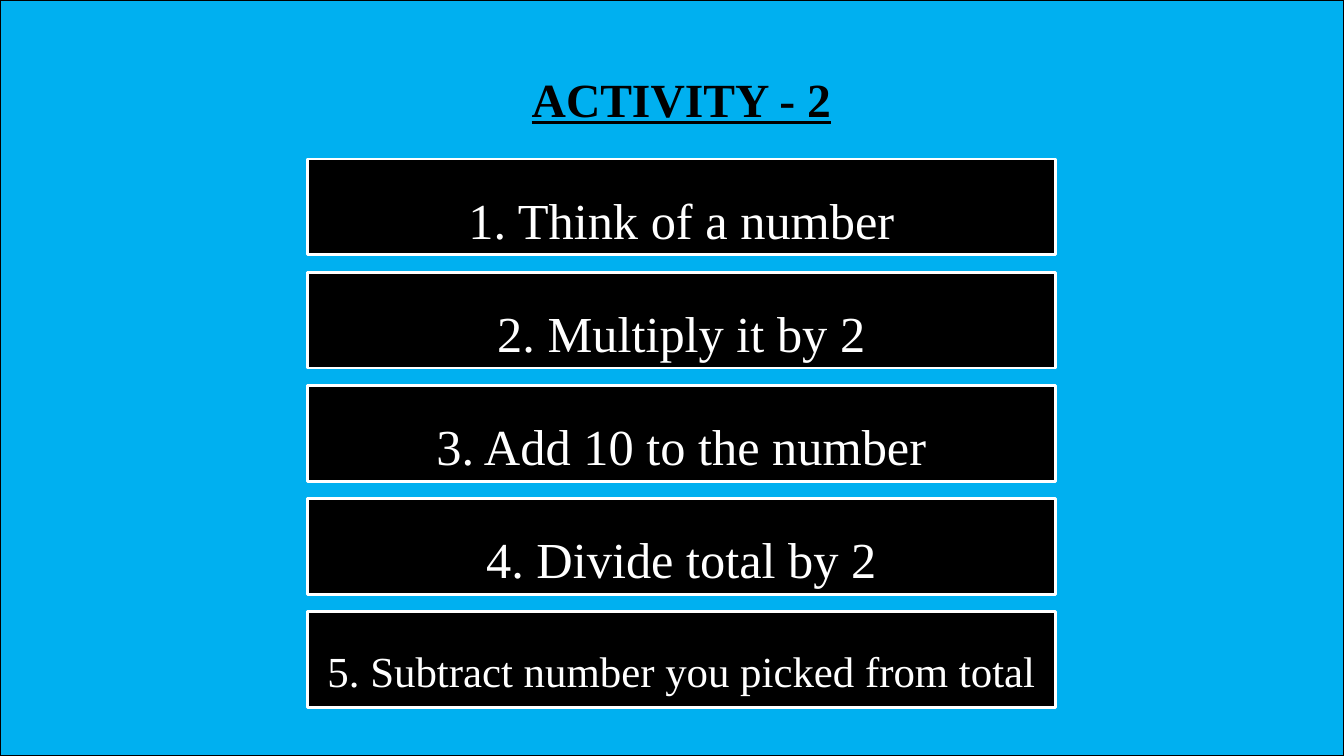
from pptx import Presentation
from pptx.dml.color import RGBColor
from pptx.enum.shapes import MSO_SHAPE
from pptx.enum.text import MSO_ANCHOR, PP_ALIGN
from pptx.util import Pt

COLORS = {"sky": "00B0F0", "black": "000000", "white": "FFFFFF"}
FONT = "Times New Roman"
SLIDE_W, SLIDE_H = 960, 540
STEP_LEFT, STEP_TOP, STEP_W, STEP_H = 219.6, 113.6, 534.2, 68.4
STEP_PITCH = 80.85
STEPS = [
    ("1. Think of a number", 36),
    ("2. Multiply it by 2", 36),
    ("3. Add 10 to the number", 36),
    ("4. Divide total by 2", 36),
    ("5. Subtract number you picked from total", 30.6),
]


def rgb(name):
    return RGBColor.from_string(COLORS[name])


def set_text(s, text, size, color, bold=False, underline=False,
             line_spacing=None, space_after=None):
    tf = s.text_frame
    tf.word_wrap = True
    tf.vertical_anchor = MSO_ANCHOR.MIDDLE
    p = tf.paragraphs[0]
    p.alignment = PP_ALIGN.CENTER
    p.line_spacing = line_spacing
    p.space_after = space_after
    r = p.add_run()
    r.text = text
    r.font.name = FONT
    r.font.size = Pt(size)
    r.font.bold = bold
    r.font.underline = underline
    r.font.color.rgb = rgb(color)


def add_rect(slide, left, top, width, height, line, line_width, fill=None):
    s = slide.shapes.add_shape(MSO_SHAPE.RECTANGLE, Pt(left), Pt(top),
                               Pt(width), Pt(height))
    s.shadow.inherit = False
    if fill:
        s.fill.solid()
        s.fill.fore_color.rgb = rgb(fill)
    else:
        s.fill.background()
    s.line.color.rgb = rgb(line)
    s.line.width = Pt(line_width)
    return s


def add_title(slide, text):
    s = slide.shapes.add_textbox(Pt(87.8), Pt(13), Pt(797.8), Pt(114.5))
    set_text(s, text, 34, "black", bold=True, underline=True)


def add_step(slide, index, text, size):
    s = add_rect(slide, STEP_LEFT, STEP_TOP + index * STEP_PITCH,
                 STEP_W, STEP_H, "white", 2, fill="black")
    set_text(s, text, size, "white", line_spacing=1.4, space_after=Pt(10))


def main():
    prs = Presentation()
    prs.slide_width, prs.slide_height = Pt(SLIDE_W), Pt(SLIDE_H)
    slide = prs.slides.add_slide(prs.slide_layouts[6])
    slide.background.fill.solid()
    slide.background.fill.fore_color.rgb = rgb("sky")

    # Title and the stack of steps
    add_title(slide, "ACTIVITY - 2")
    for i, (text, size) in enumerate(STEPS):
        add_step(slide, i, text, size)

    # Border around the slide
    add_rect(slide, 0, 0, SLIDE_W, SLIDE_H, "black", 1.5)
    prs.save("out.pptx")


if __name__ == "__main__":
    main()
